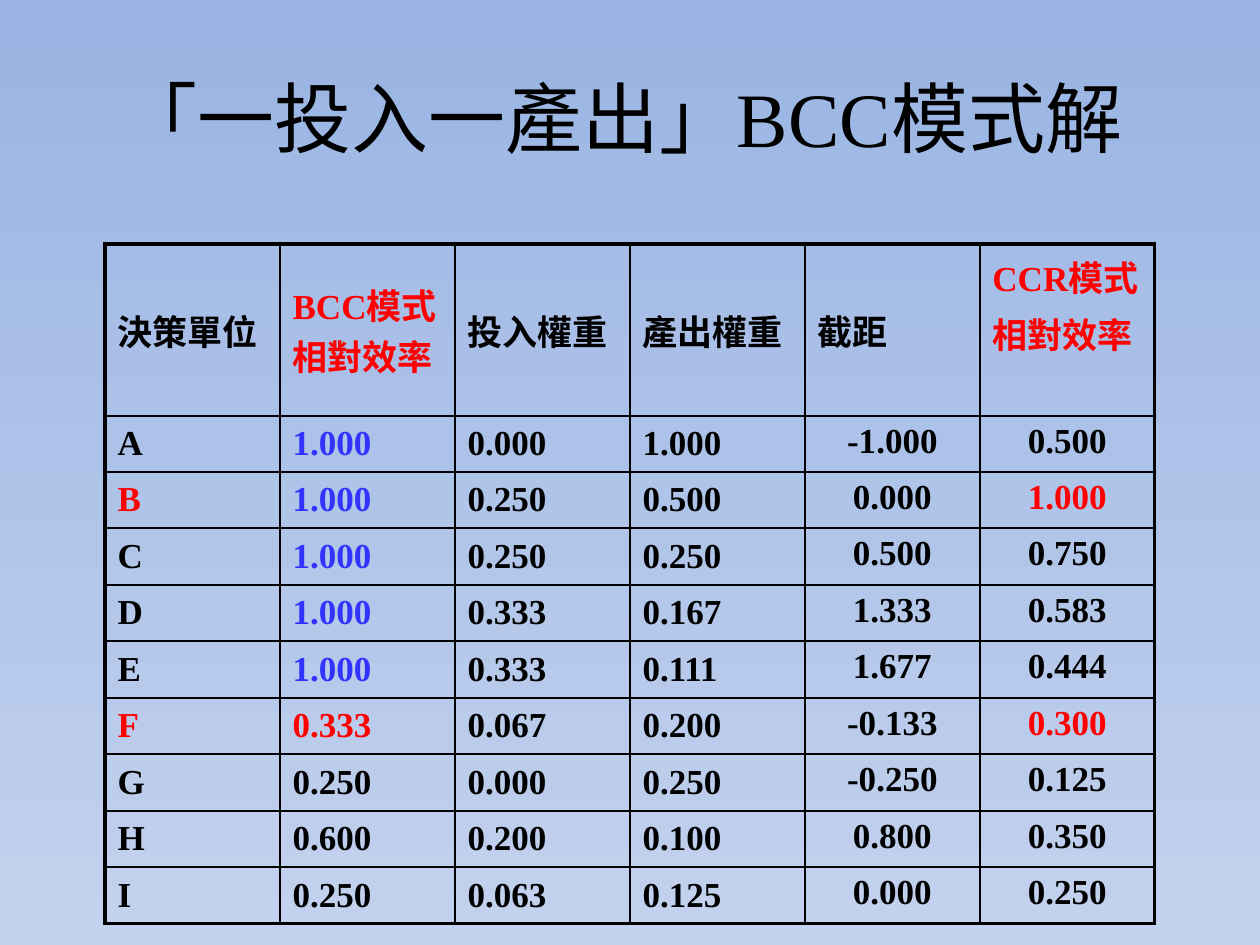
from typing import NamedTuple

from lxml.etree import SubElement
from pptx import Presentation
from pptx.dml.color import RGBColor
from pptx.enum.text import MSO_ANCHOR, PP_ALIGN
from pptx.oxml.ns import qn
from pptx.util import Emu, Pt

EMU_PER_PX = 914400 // 126
FONT = "Times New Roman"
COLORS = {
    "black": "000000",
    "red": "FF0000",
    "blue": "3333FF",
    "sky_top": "9AB5E4",
    "sky_bottom": "C2D1ED",
}
COLUMN_WIDTH = 175
HEADER_HEIGHT, UNITS_HEIGHT = 172, 508
INNER_LINE, OUTER_LINE = 1, 2.25


class Heading(NamedTuple):
    lines: tuple[str, ...]
    color: str = "black"


class Unit(NamedTuple):
    name: str
    bcc_efficiency: str
    input_weight: str
    output_weight: str
    intercept: str
    ccr_efficiency: str
    bcc_color: str = "black"
    mark_color: str = "black"

    def colors(self) -> tuple[str, ...]:
        """Return the text colour of each column."""
        return (self.mark_color, self.bcc_color, "black", "black", "black", self.mark_color)


HEADINGS = (
    Heading(("決策單位",)),
    Heading(("BCC模式相對效率",), "red"),
    Heading(("投入權重",)),
    Heading(("產出權重",)),
    Heading(("截距",)),
    Heading(("CCR模式", "相對效率"), "red"),
)
UNITS = (
    Unit("A", "1.000", "0.000", "1.000", "-1.000", "0.500", "blue"),
    Unit("B", "1.000", "0.250", "0.500", "0.000", "1.000", "blue", "red"),
    Unit("C", "1.000", "0.250", "0.250", "0.500", "0.750", "blue"),
    Unit("D", "1.000", "0.333", "0.167", "1.333", "0.583", "blue"),
    Unit("E", "1.000", "0.333", "0.111", "1.677", "0.444", "blue"),
    Unit("F", "0.333", "0.067", "0.200", "-0.133", "0.300", "red", "red"),
    Unit("G", "0.250", "0.000", "0.250", "-0.250", "0.125"),
    Unit("H", "0.600", "0.200", "0.100", "0.800", "0.350"),
    Unit("I", "0.250", "0.063", "0.125", "0.000", "0.250"),
)


def px(length: int) -> Emu:
    """Turn pixels into EMU."""
    return Emu(length * EMU_PER_PX)


def add_run(paragraph, text: str, size: int, color: str, bold: bool = False) -> None:
    """Add one styled run to a paragraph."""
    run = paragraph.add_run()
    run.text = text
    run.font.name = FONT
    run.font.size = Pt(size)
    run.font.bold = bold
    run.font.color.rgb = RGBColor.from_string(COLORS[color])


def add_border(cell, side: str, width: float) -> None:
    """Draw one solid black border of a cell."""
    line = SubElement(cell._tc.get_or_add_tcPr(), qn(f"a:ln{side}"), w=str(Pt(width)))
    fill = SubElement(line, qn("a:solidFill"))
    SubElement(fill, qn("a:srgbClr"), val=COLORS["black"])


def fill_cell(table, row: int, column: int, lines: tuple[str, ...], color: str) -> None:
    """Write the text of a cell and set its borders and fill."""
    cell = table.cell(row, column)
    last_row, last_column = len(table.rows) - 1, len(table.columns) - 1
    outer_sides = {"L": column == 0, "R": column == last_column,
                   "T": row == 0, "B": row == last_row}
    for side, is_outer in outer_sides.items():
        add_border(cell, side, OUTER_LINE if is_outer else INNER_LINE)
    cell.fill.background()
    top_anchored = column == last_column or (row > 0 and column == last_column - 1)
    cell.vertical_anchor = MSO_ANCHOR.TOP if top_anchored else MSO_ANCHOR.MIDDLE
    for index, text in enumerate(lines):
        paragraph = cell.text_frame.add_paragraph() if index else cell.text_frame.paragraphs[0]
        if index:
            paragraph.space_before = Pt(4)
        if row > 0 and top_anchored:
            paragraph.alignment = PP_ALIGN.CENTER
        add_run(paragraph, text, 20, color, bold=True)


def add_title(slide, text: str) -> None:
    """Add the centred slide title."""
    shape = slide.shapes.add_textbox(px(63), px(38), px(1134), px(157))
    shape.text_frame.word_wrap = True
    shape.text_frame.vertical_anchor = MSO_ANCHOR.MIDDLE
    paragraph = shape.text_frame.paragraphs[0]
    paragraph.alignment = PP_ALIGN.CENTER
    add_run(paragraph, text, 44, "black")


def add_results_table(slide) -> None:
    """Add the table of efficiencies and weights."""
    edges = [UNITS_HEIGHT * index // len(UNITS) for index in range(len(UNITS) + 1)]
    heights = [HEADER_HEIGHT] + [bottom - top for top, bottom in zip(edges, edges[1:])]
    table = slide.shapes.add_table(
        len(heights), len(HEADINGS), px(105), px(244),
        px(COLUMN_WIDTH * len(HEADINGS)), px(sum(heights)),
    ).table
    table.first_row = table.horz_banding = False
    for column in table.columns:
        column.width = px(COLUMN_WIDTH)
    for table_row, height in zip(table.rows, heights):
        table_row.height = px(height)
    for column, heading in enumerate(HEADINGS):
        fill_cell(table, 0, column, heading.lines, heading.color)
    for row, unit in enumerate(UNITS, start=1):
        for column, color in enumerate(unit.colors()):
            fill_cell(table, row, column, (unit[column],), color)


def paint_background(slide) -> None:
    """Fill the background with a vertical gradient."""
    fill = slide.background.fill
    fill.gradient()
    fill.gradient_angle = 270
    for stop, color in zip(fill.gradient_stops, ("sky_top", "sky_bottom")):
        stop.color.rgb = RGBColor.from_string(COLORS[color])


def main() -> None:
    """Build and save the presentation."""
    presentation = Presentation()
    presentation.slide_width, presentation.slide_height = px(1260), px(945)
    slide = presentation.slides.add_slide(presentation.slide_layouts[6])
    paint_background(slide)
    add_title(slide, "「一投入一產出」BCC模式解 ")
    add_results_table(slide)
    presentation.save("out.pptx")


if __name__ == "__main__":
    main()
